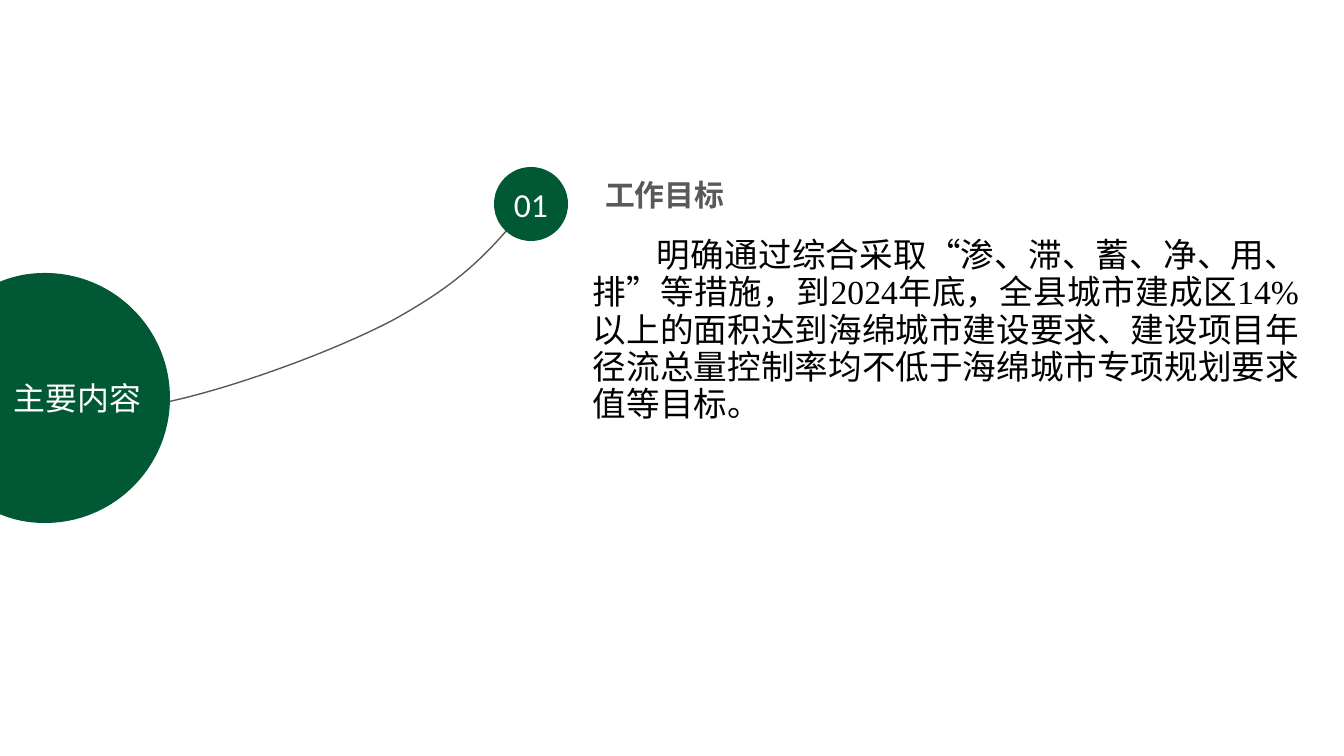
from dataclasses import dataclass

from lxml.etree import SubElement
from pptx import Presentation
from pptx.dml.color import RGBColor
from pptx.enum.shapes import MSO_SHAPE as Preset
from pptx.enum.text import MSO_ANCHOR as Anchor, MSO_AUTO_SIZE as AutoSize, PP_ALIGN as Align
from pptx.oxml.ns import qn
from pptx.shapes.autoshape import Shape
from pptx.slide import Slide
from pptx.util import Emu, Pt

PX = 914400 / 134.4
GREEN, GRAY, WHITE, BLACK = "015835", "595959", "FFFFFF", "000000"
TEXT_MARGINS = (13, 7, 13, 7)
Point = tuple[int, int]


@dataclass(frozen=True)
class Label:
    """Wording and look of one text."""
    text: str
    size: float
    font: str
    color: str
    align: Align = Align.CENTER
    anchor: Anchor = Anchor.MIDDLE
    bold: bool = False
    wrap: bool = True
    fit: AutoSize = AutoSize.NONE
    margins: tuple[int, int, int, int] = (0, 0, 0, 0)


@dataclass(frozen=True)
class Box:
    """Place of a shape in px."""
    left: int
    top: int
    width: int
    height: int

    def emu(self) -> list[Emu]:
        """Return left, top, width and height in EMU."""
        return [px(value) for value in (self.left, self.top, self.width, self.height)]


def px(value: int) -> Emu:
    """Turn px into EMU."""
    return Emu(round(value * PX))


def rgb(color: str) -> RGBColor:
    """Turn a hex string into a colour."""
    return RGBColor.from_string(color)


def write(shape: Shape, label: Label) -> None:
    """Put a label into a shape."""
    frame = shape.text_frame
    frame.text = label.text
    frame.word_wrap = label.wrap
    frame.auto_size = label.fit
    frame.vertical_anchor = label.anchor
    frame.margin_left, frame.margin_top, frame.margin_right, frame.margin_bottom = map(px, label.margins)
    paragraph = frame.paragraphs[0]
    paragraph.alignment = label.align
    font = paragraph.font
    font.name, font.size, font.bold = label.font, Pt(label.size), label.bold
    font.color.rgb = rgb(label.color)


def paint(shape: Shape, color: str) -> None:
    """Give a shape a plain fill without line or shadow."""
    shape.shadow.inherit = False
    shape.fill.solid()
    shape.fill.fore_color.rgb = rgb(color)
    shape.line.fill.background()


def outline(slide: Slide, start: Point, segments: list[list[Point]], close: bool) -> Shape:
    """Draw a freeform whose one-point segments are lines and three-point segments curves."""
    builder = slide.shapes.build_freeform(*map(px, start))
    builder.add_line_segments([(px(x), px(y)) for segment in segments for x, y in segment], close=close)
    shape = builder.convert_to_shape()
    lines = iter(list(shape._element.iter(qn("a:lnTo"))))
    for segment in segments:
        steps = [next(lines) for _ in segment]
        if len(steps) == 3:
            curve = SubElement(steps[0].getparent(), qn("a:cubicBezTo"))
            steps[0].addprevious(curve)
            for step in steps:
                curve.append(step[0])
                step.getparent().remove(step)
    return shape


def main() -> None:
    """Build the slide and save it."""
    presentation = Presentation()
    presentation.slide_width, presentation.slide_height = px(1344), px(756)
    slide = presentation.slides.add_slide(presentation.slide_layouts[5])

    link = outline(slide, (167, 402), [
        [(233, 388), (335, 351), (395, 319)],
        [(454, 286), (485, 259), (526, 207)],
    ], close=False)
    link.shadow.inherit = False
    link.fill.background()
    link.line.color.rgb = rgb(GRAY)
    link.line.width = Pt(0.75)

    number = slide.shapes.add_shape(Preset.OVAL, *Box(494, 167, 74, 74).emu())
    paint(number, GREEN)
    write(number, Label("01", 18, "Calibri", WHITE))

    topic = outline(slide, (45, 273), [
        [(114, 273), (170, 329), (170, 398)],
        [(170, 467), (114, 523), (45, 523)],
        [(28, 523), (13, 520), (-3, 513)],
        [(-3, 283)],
        [(13, 276), (28, 273), (45, 273)],
    ], close=True)
    paint(topic, GREEN)
    write(topic, Label("主要内容", 17.1, "Arial", WHITE, margins=(0, 0, 12, 0)))

    goal = slide.shapes.add_textbox(*Box(580, 230, 732, 202).emu())
    write(goal, Label(
        "明确通过综合采取“渗、滞、蓄、净、用、排”等措施，到2024年底，全县城市建成区14%以上的面积"
        "达到海绵城市建设要求、建设项目年径流总量控制率均不低于海绵城市专项规划要求值等目标。",
        18, "Times New Roman", BLACK, Align.JUSTIFY, Anchor.TOP,
        fit=AutoSize.SHAPE_TO_FIT_TEXT, margins=TEXT_MARGINS))
    paragraph = goal.text_frame.paragraphs[0]
    paragraph.line_spacing = Pt(20)
    paragraph._p.get_or_add_pPr().set("indent", str(px(64)))

    title = slide.shapes.title
    title.left, title.top, title.width, title.height = Box(592, 170, 146, 50).emu()
    write(title, Label("工作目标", 16, "Calibri", GRAY, Align.LEFT, Anchor.TOP, bold=True,
                       wrap=False, fit=AutoSize.SHAPE_TO_FIT_TEXT, margins=TEXT_MARGINS))

    presentation.save("out.pptx")


if __name__ == "__main__":
    main()
